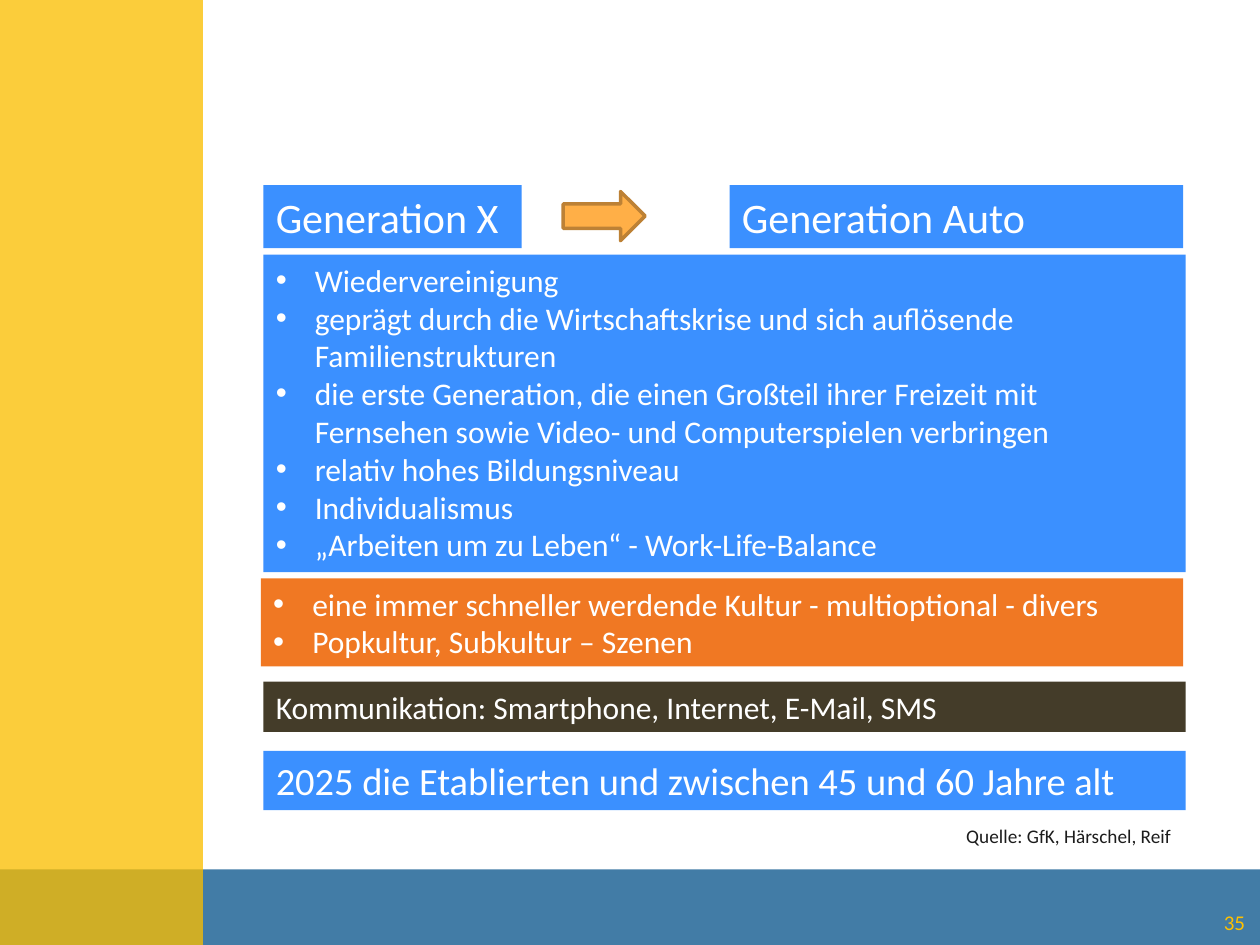
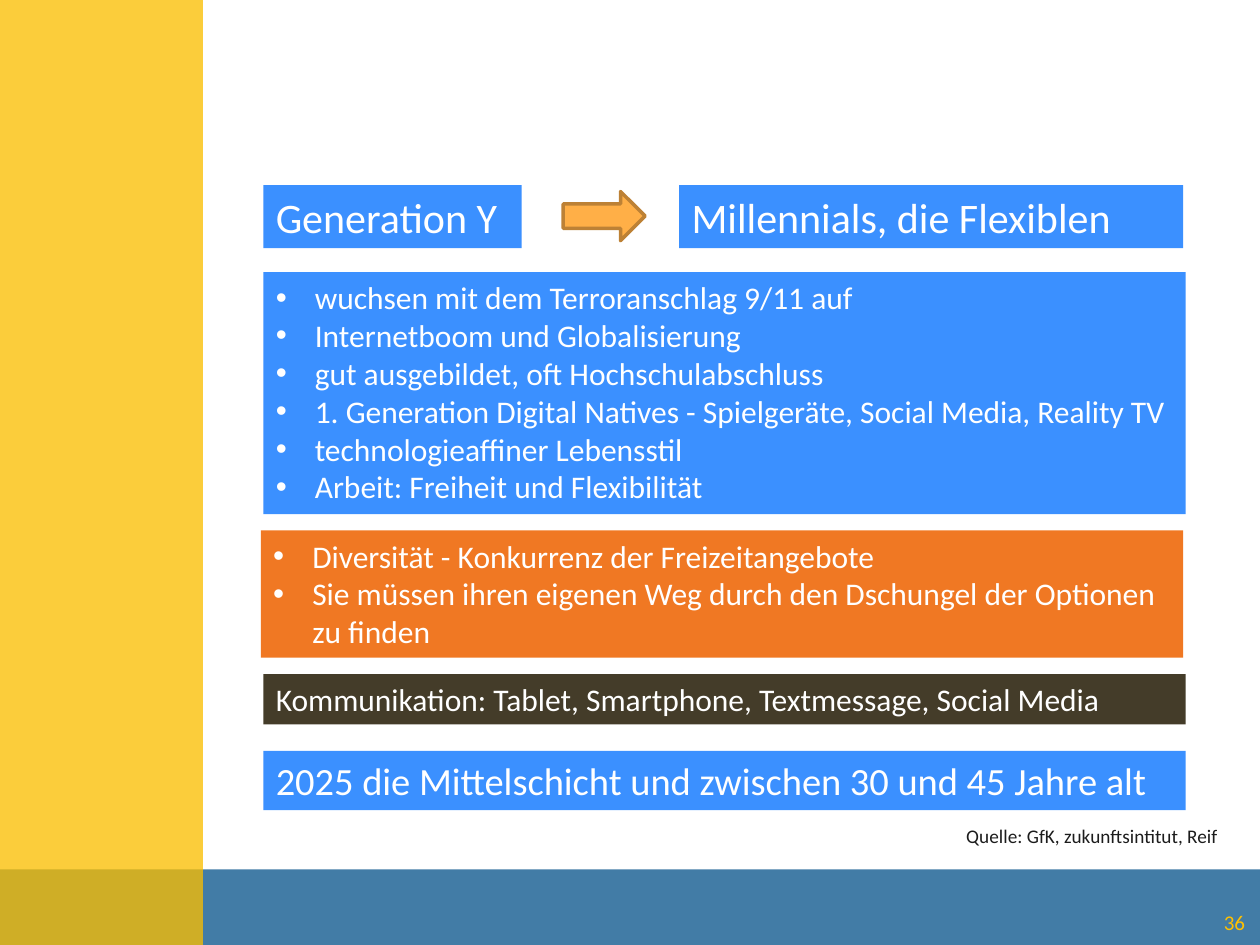
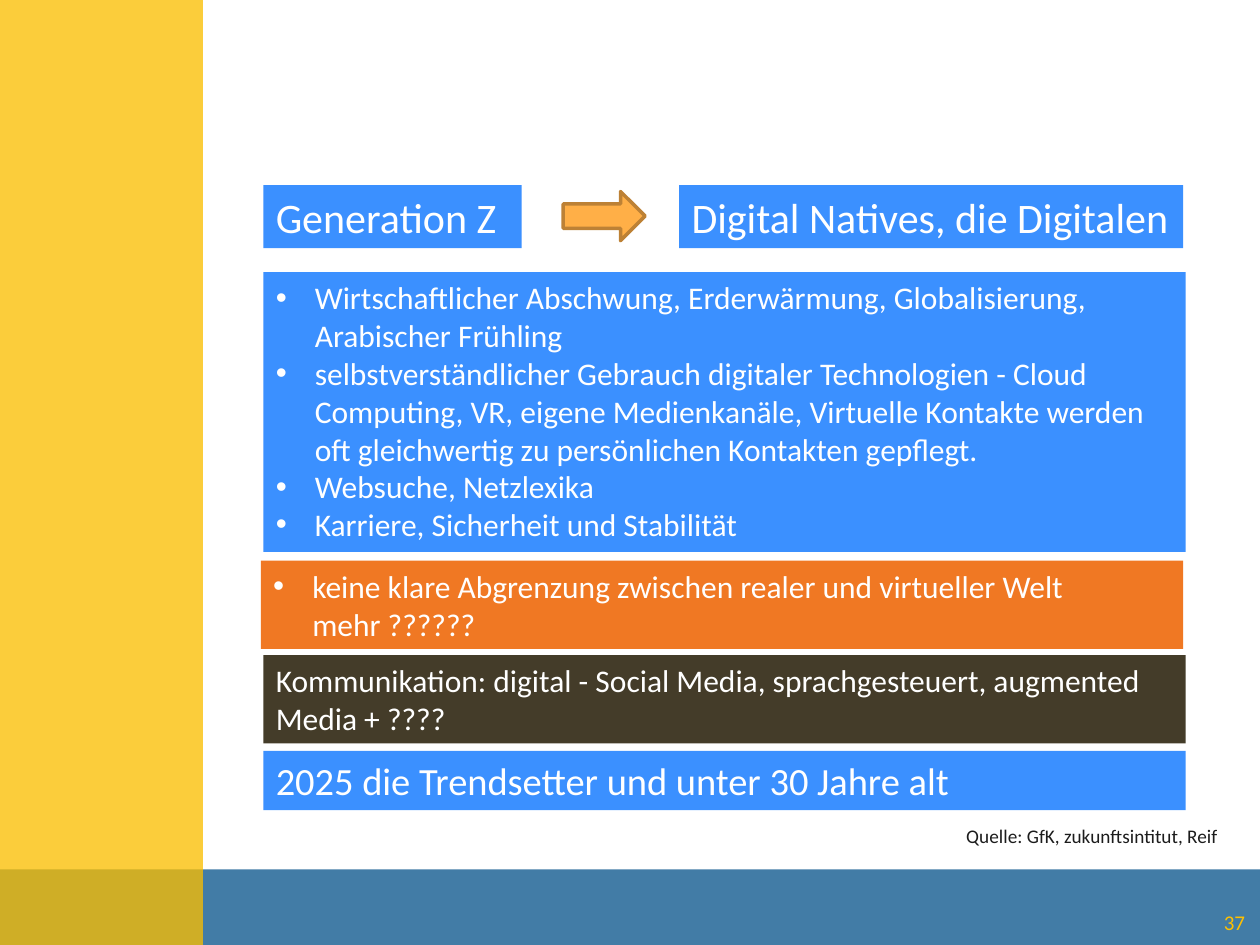
from dataclasses import dataclass

from pptx import Presentation
from pptx.dml.color import RGBColor
from pptx.enum.shapes import MSO_SHAPE
from pptx.enum.text import MSO_ANCHOR, MSO_AUTO_SIZE, PP_ALIGN
from pptx.oxml.ns import qn
from pptx.util import Inches, Pt
from lxml.etree import SubElement


@dataclass(frozen=True)
class Theme:
    font: str = "Calibri"
    blue: str = "3B90FF"
    orange: str = "F07823"
    brown: str = "443C29"
    arrow: str = "FFAF47"
    edge: str = "BD8135"
    foot: str = "0A558C"
    side: str = "FABE00"
    page: str = "FFC000"
    white: str = "FFFFFF"
    dark: str = "1C1C1C"
    head: int = 24
    sum: int = 22
    body: int = 18
    num: int = 12
    note: int = 11


T = Theme()
FIRST = 35
LEFT, WIDE, RIGHT = 2.09, 7.32, 9.39
HEAD_TOP, SUM_TOP, NOTE_TOP = 1.47, 5.96, 6.49

# Each block holds its top, its number of text lines and its text.
SLIDES = [
    {
        "name": "Generation X",
        "alias": ("Generation Auto", 3.6),
        "traits": (2.02, 8, [
            "Wiedervereinigung",
            "geprägt durch die Wirtschaftskrise und sich auflösende Familienstrukturen",
            "die erste Generation, die einen Großteil ihrer Freizeit mit Fernsehen "
            "sowie Video- und Computerspielen verbringen",
            "relativ hohes Bildungsniveau",
            "Individualismus",
            "„Arbeiten um zu Leben“ - Work-Life-Balance",
        ]),
        "culture": (4.59, 2, [
            "eine immer schneller werdende Kultur - multioptional - divers",
            "Popkultur, Subkultur – Szenen",
        ]),
        "media": (5.41, 1, ["Kommunikation: Smartphone, Internet, E-Mail, SMS"]),
        "future": "2025 die Etablierten und zwischen 45 und 60 Jahre alt",
        "source": ("Quelle: GfK, Härschel, Reif", 1.85),
    },
    {
        "name": "Generation Y",
        "alias": ("Millennials, die Flexiblen", 4),
        "traits": (2.16, 6, [
            "wuchsen mit dem Terroranschlag 9/11 auf",
            "Internetboom und Globalisierung",
            "gut ausgebildet, oft Hochschulabschluss",
            "1. Generation Digital Natives - Spielgeräte, Social Media, Reality TV",
            "technologieaffiner Lebensstil",
            "Arbeit: Freiheit und Flexibilität",
        ]),
        "culture": (4.21, 3, [
            "Diversität - Konkurrenz der Freizeitangebote",
            "Sie müssen ihren eigenen Weg durch den Dschungel der Optionen zu finden",
        ]),
        "media": (5.35, 1, [
            "Kommunikation: Tablet, Smartphone, Textmessage, Social Media"]),
        "future": "2025 die Mittelschicht und zwischen 30 und 45 Jahre alt",
        "source": ("Quelle: GfK, zukunftsintitut, Reif", 2.22),
    },
    {
        "name": "Generation Z",
        "alias": ("Digital Natives, die Digitalen", 4),
        "traits": (2.16, 7, [
            "Wirtschaftlicher Abschwung, Erderwärmung, Globalisierung, Arabischer Frühling",
            "selbstverständlicher Gebrauch digitaler Technologien - Cloud Computing, VR, "
            "eigene Medienkanäle, Virtuelle Kontakte werden oft gleichwertig zu "
            "persönlichen Kontakten gepflegt.",
            "Websuche, Netzlexika",
            "Karriere, Sicherheit und Stabilität",
        ]),
        "culture": (4.45, 2, [
            "keine klare Abgrenzung zwischen realer und virtueller Welt mehr ??????",
        ]),
        "media": (5.2, 2, [
            "Kommunikation: digital - Social Media, sprachgesteuert, augmented Media + ????"]),
        "future": "2025 die Trendsetter und unter 30 Jahre alt",
        "source": ("Quelle: GfK, zukunftsintitut, Reif", 2.22),
    },
]


def tall(size, lines=1):
    """Height in inches of a box that fits its lines and margins."""
    return round(0.1 + lines * size * 1.21 / 72, 2)


def shape(slide, kind, area, fill):
    item = slide.shapes.add_shape(kind, *map(Inches, area))
    item.shadow.inherit = False
    item.fill.solid()
    item.fill.fore_color.rgb = RGBColor.from_string(fill)
    item.line.fill.background()
    return item


def band(slide, area, fill):
    item = shape(slide, MSO_SHAPE.RECTANGLE, area, fill)
    color = next(item._element.spPr.iter(qn("a:srgbClr")))
    SubElement(color, qn("a:alpha"), val="77000")


def bullet(para):
    props = para._p.get_or_add_pPr()
    props.set("marL", str(Inches(0.31)))
    props.set("indent", str(-Inches(0.31)))
    SubElement(props, qn("a:buFont"), typeface="Arial")
    SubElement(props, qn("a:buChar"), char="•")


def write(item, texts, size, color, align=PP_ALIGN.LEFT, dots=False):
    frame = item.text_frame
    frame.text = "\n".join(texts)
    frame.vertical_anchor = MSO_ANCHOR.TOP
    for para in frame.paragraphs:
        para.alignment = align
        if dots:
            bullet(para)
        for run in para.runs:
            run.font.name = T.font
            run.font.size = Pt(size)
            run.font.color.rgb = RGBColor.from_string(color)
    return frame


def box(slide, left, top, width, texts, fill, size, lines=1, dots=False):
    area = (left, top, width, tall(size, lines))
    item = shape(slide, MSO_SHAPE.RECTANGLE, area, fill)
    frame = write(item, texts, size, T.white, dots=dots)
    frame.word_wrap = True
    frame.auto_size = MSO_AUTO_SIZE.SHAPE_TO_FIT_TEXT


def label(slide, area, text, size, color, align=PP_ALIGN.LEFT):
    item = slide.shapes.add_textbox(*map(Inches, area))
    return write(item, [text], size, color, align)


def base(slide, page):
    """Draw the bands and the page number."""
    band(slide, (0, 6.9, 10, 0.6), T.foot)
    band(slide, (0, 0, 1.61, 7.5), T.side)
    frame = label(slide, (7.65, 7.14, 2.33, 0.36), str(page),
                  T.num, T.page, PP_ALIGN.RIGHT)
    frame.word_wrap = True
    frame.vertical_anchor = MSO_ANCHOR.MIDDLE


def heads(slide, name, alias, width):
    arrow = shape(slide, MSO_SHAPE.RIGHT_ARROW, (4.47, 1.52, 0.65, 0.39), T.arrow)
    arrow.line.color.rgb = RGBColor.from_string(T.edge)
    arrow.line.width = Pt(2)
    box(slide, LEFT, HEAD_TOP, 2.05, [name], T.blue, T.head)
    box(slide, RIGHT - width, HEAD_TOP, width, [alias], T.blue, T.head)


def main():
    deck = Presentation()
    deck.slide_width, deck.slide_height = Inches(10), Inches(7.5)
    for page, data in enumerate(SLIDES, FIRST):
        slide = deck.slides.add_slide(deck.slide_layouts[6])
        base(slide, page)
        heads(slide, data["name"], *data["alias"])
        for key, left, fill, dots in (
            ("traits", LEFT, T.blue, True),
            ("culture", RIGHT - WIDE, T.orange, True),
            ("media", LEFT, T.brown, False),
        ):
            top, lines, texts = data[key]
            box(slide, left, top, WIDE, texts, fill, T.body, lines, dots)
        box(slide, LEFT, SUM_TOP, WIDE, [data["future"]], T.blue, T.sum)
        text, width = data["source"]
        frame = label(slide, (7.57, NOTE_TOP, width, tall(T.note)),
                      text, T.note, T.dark)
        frame.word_wrap = False
        frame.auto_size = MSO_AUTO_SIZE.SHAPE_TO_FIT_TEXT
    deck.save("out.pptx")


if __name__ == "__main__":
    main()
